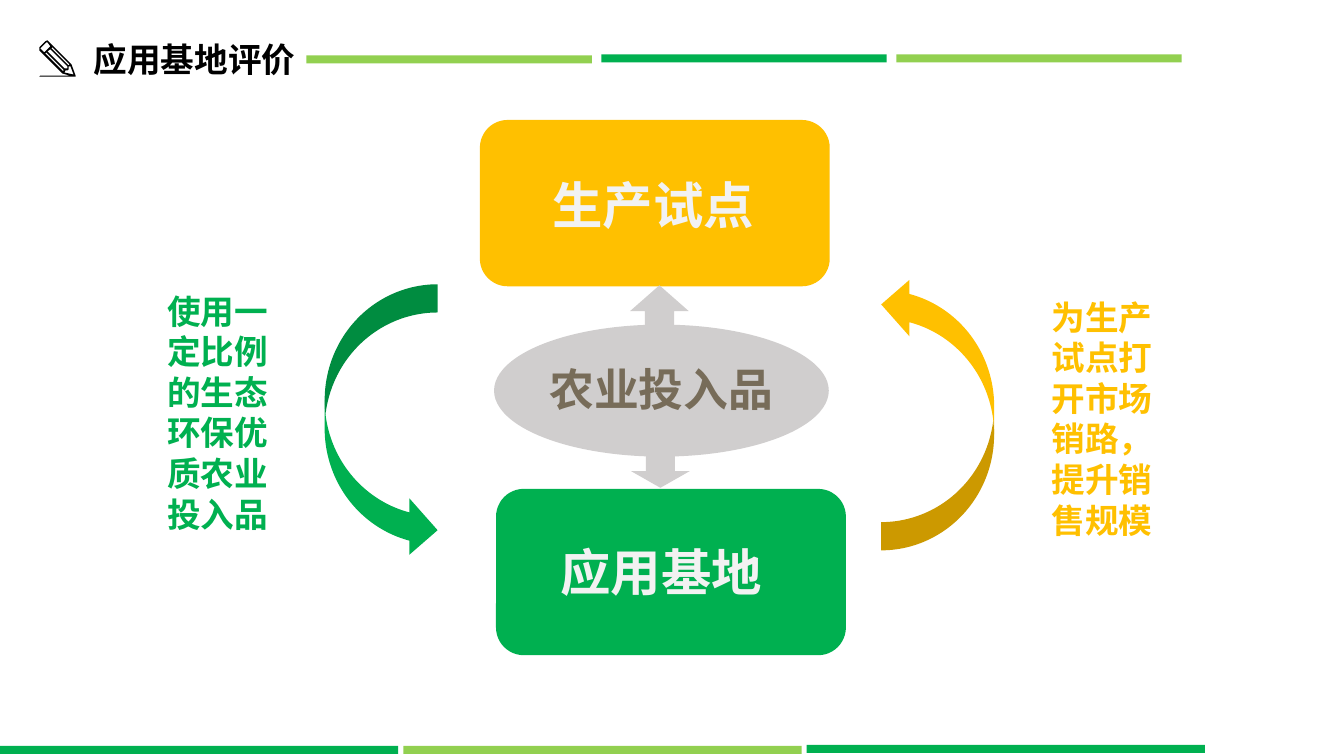
import pptx
import pptx.util
import pptx.dml.color
import pptx.enum.shapes
import pptx.enum.text
import pptx.oxml.ns
from dataclasses import dataclass
from lxml import etree

Inches = pptx.util.Inches
SHAPE = pptx.enum.shapes.MSO_SHAPE
TEXT = pptx.enum.text


@dataclass(frozen=True)
class Theme:
    font: str = "Noto Sans CJK SC"
    black: str = "000000"
    green: str = "00B050"
    lime: str = "92D050"
    amber: str = "FFC000"
    grey: str = "D0CECE"
    brown: str = "776C59"
    pale: str = "F2F2F2"
    body_size: int = 24
    input_size: int = 32
    box_size: int = 36
    leading: float = 1.21


THEME = Theme()

# Pencil outline followed by its openings, in hundredths of an inch
PENCIL = [
    [(75, 76), (75, 75), (71, 64), (48, 41), (47, 40), (45, 41), (39, 47),
     (39, 50), (62, 73), (69, 75), (40, 75), (39, 75.5), (40, 76)],
    [(73, 74), (64, 72), (65, 70), (67, 70), (68, 69), (68, 66), (70, 66)],
    [(52, 47), (69, 64), (68, 65), (51, 48)],
    [(50, 49), (67, 66), (67, 68), (64, 68), (47, 51)],
    [(40, 48), (46, 42), (47, 42), (50, 46), (44, 52)],
    [(46, 52), (63, 69), (63, 71), (45, 53)],
]


def rgb(color):
    return pptx.dml.color.RGBColor.from_string(color)


def paint(shape, color):
    shape.shadow.inherit = False
    shape.fill.solid()
    shape.fill.fore_color.rgb = rgb(color)
    shape.line.fill.background()


def add_block(slide, kind, box, color, rotation=0):
    block = slide.shapes.add_shape(kind, *map(Inches, box))
    block.rotation = rotation
    paint(block, color)


def add_bars(slide, left, pitch, width, tops, colors):
    for i, (top, color) in enumerate(zip(tops, colors)):
        add_block(slide, SHAPE.RECTANGLE, (left + i * pitch, top, width, 0.08), color)


def add_pencil(slide):
    outline, *openings = PENCIL
    builder = slide.shapes.build_freeform(*outline[0], scale=Inches(0.01))
    builder.add_line_segments(outline[1:], close=True)
    for opening in openings:
        builder.move_to(*opening[0])
        builder.add_line_segments(opening[1:], close=True)
    paint(builder.convert_to_shape(), THEME.black)


def write(holder, words, size, color, wrap=True):
    frame = holder.text_frame
    frame_format = {
        "word_wrap": wrap,
        "auto_size": TEXT.MSO_AUTO_SIZE.NONE,
        "vertical_anchor": TEXT.MSO_ANCHOR.TOP,
    }
    for name, value in frame_format.items():
        setattr(frame, name, value)
    paragraph = frame.paragraphs[0]
    paragraph.alignment = TEXT.PP_ALIGN.LEFT
    paragraph.line_spacing = pptx.util.Pt(round(size * THEME.leading))
    run = paragraph.add_run()
    run.text = words
    run_format = {"name": THEME.font, "size": pptx.util.Pt(size), "bold": True}
    for name, value in run_format.items():
        setattr(run.font, name, value)
    run.font.color.rgb = rgb(color)
    # East Asian glyphs take their own typeface element
    east_asian = etree.SubElement(run.font._element, pptx.oxml.ns.qn("a:ea"))
    east_asian.set("typeface", THEME.font)


def add_label(slide, box, words, size, color, wrap=True):
    label = slide.shapes.add_textbox(*map(Inches, box))
    write(label, words, size, color, wrap)


def add_title(slide, box, words):
    title = slide.shapes.title
    for name, value in zip(("left", "top", "width", "height"), box):
        setattr(title, name, Inches(value))
    write(title, words, THEME.body_size, THEME.black)


def main():
    deck = pptx.Presentation()
    deck.slide_width, deck.slide_height = Inches(13.33), Inches(7.5)
    slide = deck.slides.add_slide(deck.slide_layouts[5])

    # Heading
    add_title(slide, (0.83, 0.33, 6.11, 0.5), "应用基地评价")
    add_pencil(slide)

    # Production pilot and application base
    add_block(slide, SHAPE.ROUNDED_RECTANGLE, (4.76, 1.19, 3.47, 1.65), THEME.amber)
    add_block(slide, SHAPE.ROUNDED_RECTANGLE, (4.92, 4.85, 3.47, 1.65), THEME.green)
    add_label(slide, (5.38, 1.67, 2.23, 0.71), "生产试点",
              THEME.box_size, THEME.pale, wrap=False)
    add_label(slide, (5.46, 5.31, 2.23, 0.71), "应用基地",
              THEME.box_size, THEME.pale, wrap=False)

    # Exchange between the two, with a caption on each side
    add_block(slide, SHAPE.CURVED_RIGHT_ARROW, (3.22, 2.82, 1.12, 2.72), THEME.green)
    add_label(slide, (1.56, 2.83, 1.51, 2.52), "使用一定比例的生态环保优质农业投入品",
              THEME.body_size, THEME.green)
    add_block(slide, SHAPE.CURVED_RIGHT_ARROW, (8.74, 2.74, 1.12, 2.72), THEME.amber, 180)
    add_label(slide, (10.33, 2.89, 1.22, 2.52), "为生产试点打开市场销路，提升销售规模",
              THEME.body_size, THEME.amber)

    # Farm inputs in the middle
    add_block(slide, SHAPE.OVAL, (4.9, 3.22, 3.32, 1.31), THEME.grey)
    add_label(slide, (5.35, 3.53, 2.45, 0.64), "农业投入品",
              THEME.input_size, THEME.brown, wrap=False)
    add_block(slide, SHAPE.DOWN_ARROW, (6.26, 4.51, 0.58, 0.33), THEME.grey)
    add_block(slide, SHAPE.DOWN_ARROW, (6.25, 2.83, 0.58, 0.51), THEME.grey, 180)

    # Footer and header bars
    add_bars(slide, 0, 4, 3.95, (7.4, 7.4, 7.39), (THEME.green, THEME.lime, THEME.green))
    add_bars(slide, 3.04, 2.925, 2.83, (0.55, 0.54, 0.54),
             (THEME.lime, THEME.green, THEME.lime))

    deck.save("out.pptx")


if __name__ == "__main__":
    main()
